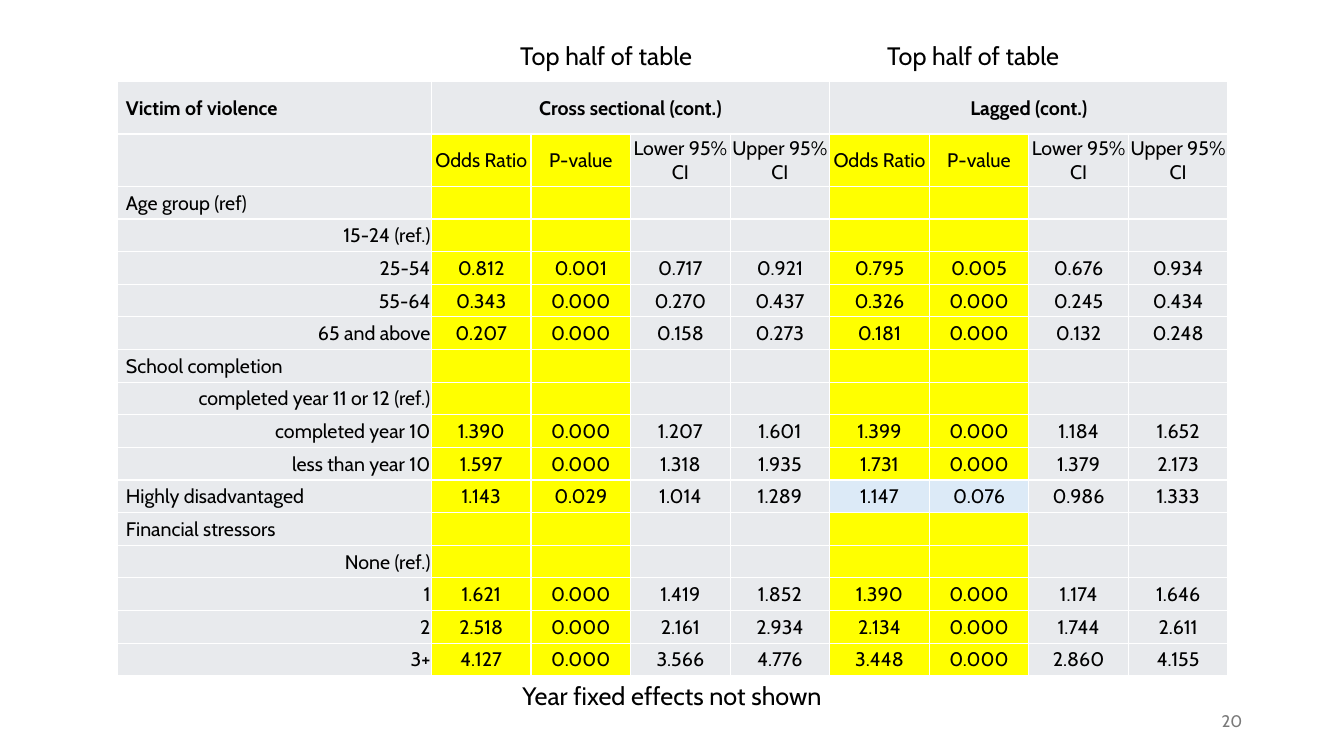
"""Build the slide with the odds-ratio table for victims of violence."""
import lxml.etree
import pptx
import pptx.dml.color
import pptx.enum.text
import pptx.oxml.ns
import pptx.util

Inches = pptx.util.Inches
Pt = pptx.util.Pt
align = pptx.enum.text.PP_ALIGN
middle = pptx.enum.text.MSO_ANCHOR.MIDDLE
qn = pptx.oxml.ns.qn
colors = {"text": "000000", "number": "797979", "grey": "E8EAED",
          "yellow": "FFFF00", "blue": "DCEAF7", "line": "FFFFFF"}


def rgb(name):
    return pptx.dml.color.RGBColor.from_string(colors[name])


def write(para, text, size, side, color="text", bold=False):
    para.alignment = side
    run = para.add_run()
    run.text = text
    run.font.name = "Cabin"
    run.font.size = Pt(size)
    run.font.bold = bold
    run.font.color.rgb = rgb(color)


prs = pptx.Presentation()
prs.slide_width = Inches(13.33)
prs.slide_height = Inches(7.5)
slide = prs.slides.add_slide(prs.slide_layouts[6])

heads = ["Odds Ratio", "P-value", "Lower 95% CI", "Upper 95% CI"]
groups = ["Victim of violence", "Age group (ref)", "School completion",
          "Highly disadvantaged", "Financial stressors"]
rows = [
    ["Victim of violence", "Cross sectional (cont.)", "", "", "", "Lagged (cont.)"],
    ["", *heads, *heads],
    ["Age group (ref)"],
    ["15-24 (ref.)"],
    ["25-54", "0.812", "0.001", "0.717", "0.921", "0.795", "0.005", "0.676", "0.934"],
    ["55-64", "0.343", "0.000", "0.270", "0.437", "0.326", "0.000", "0.245", "0.434"],
    ["65 and above", "0.207", "0.000", "0.158", "0.273", "0.181", "0.000", "0.132", "0.248"],
    ["School completion"],
    ["completed year 11 or 12 (ref.)"],
    ["completed year 10", "1.390", "0.000", "1.207", "1.601", "1.399", "0.000", "1.184", "1.652"],
    ["less than year 10", "1.597", "0.000", "1.318", "1.935", "1.731", "0.000", "1.379", "2.173"],
    ["Highly disadvantaged", "1.143", "0.029", "1.014", "1.289", "1.147", "0.076", "0.986", "1.333"],
    ["Financial stressors"],
    ["None (ref.)"],
    ["1", "1.621", "0.000", "1.419", "1.852", "1.390", "0.000", "1.174", "1.646"],
    ["2", "2.518", "0.000", "2.161", "2.934", "2.134", "0.000", "1.744", "2.611"],
    ["3+", "4.127", "0.000", "3.566", "4.776", "3.448", "0.000", "2.860", "4.155"],
]

width, height, first, head = 11.02, 5.9, 3.12, 0.52
frame = slide.shapes.add_table(len(rows), 9, Inches(1.16), Inches(0.81),
                               Inches(width), Inches(height))
table = frame.table
for c, col in enumerate(table.columns):
    col.width = Inches((width - first) / 8 if c else first)
for r, row in enumerate(table.rows):
    row.height = Inches(head if r < 2 else (height - 2 * head) / (len(rows) - 2))
for c in (1, 5):
    table.cell(0, c).merge(table.cell(0, c + 3))

for r, row in enumerate(rows):
    for c in range(9):
        cell = table.cell(r, c)
        text = row[c] if c < len(row) else ""
        title = c == 0 and text in groups
        cell.vertical_anchor = middle
        cell.margin_left = Inches(0.09 if title else 0.01)
        cell.margin_right = cell.margin_top = Inches(0.01)
        cell.margin_bottom = 0
        para = cell.text_frame.paragraphs[0]
        if text:
            side = align.CENTER if c else align.LEFT if title else align.RIGHT
            write(para, text, 14, side, bold=r == 0)
        else:
            lxml.etree.SubElement(para._p, qn("a:endParaRPr"), sz="1400")
        props = cell._tc.get_or_add_tcPr()
        for edge in ("L", "R", "T", "B"):
            line = lxml.etree.SubElement(props, qn("a:ln" + edge), w=str(Pt(1)))
            solid = lxml.etree.SubElement(line, qn("a:solidFill"))
            lxml.etree.SubElement(solid, qn("a:srgbClr"), val=colors["line"])
        fill = "yellow" if r and c in (1, 2, 5, 6) else "grey"
        if row[0] == "Highly disadvantaged" and c in (5, 6):
            fill = "blue"
        cell.fill.solid()
        cell.fill.fore_color.rgb = rgb(fill)

notes = [
    ("Year fixed effects not shown", 1.64, 6.7, 10.05, 18, align.CENTER, "text"),
    ("20", 9.42, 6.95, 3, 12, align.RIGHT, "number"),
    ("Top half of table ", 4.37, 0.35, 3.34, 18, align.CENTER, "text"),
    ("Top half of table ", 8.01, 0.35, 3.34, 18, align.CENTER, "text"),
]
for text, left, top, wide, size, side, color in notes:
    box = slide.shapes.add_textbox(Inches(left), Inches(top), Inches(wide), Inches(0.4))
    box.text_frame.word_wrap = True
    if color == "number":
        box.text_frame.vertical_anchor = middle
    write(box.text_frame.paragraphs[0], text, size, side, color)

prs.save("out.pptx")
